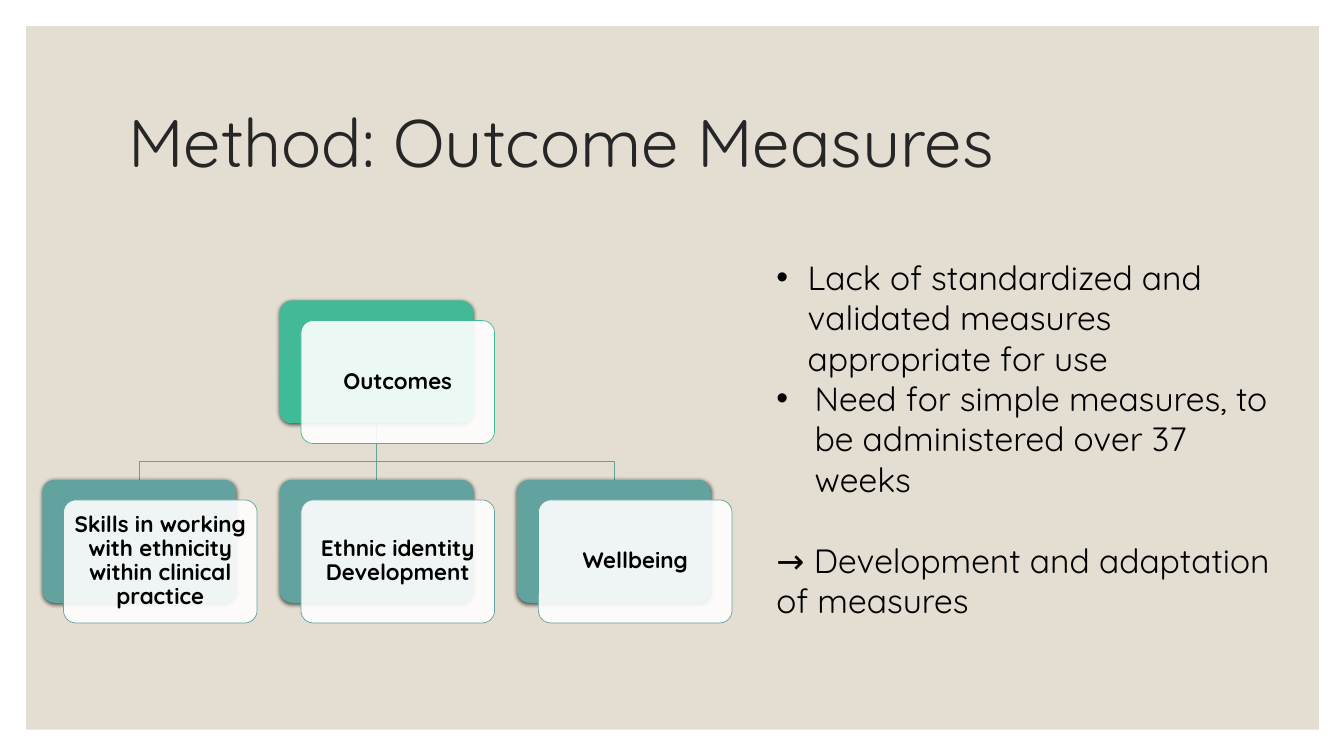
from lxml import etree
from pptx import Presentation
from pptx.dml.color import RGBColor
from pptx.enum import shapes, text
from pptx.oxml import parse_xml
from pptx.oxml.ns import nsdecls, qn
from pptx.util import Inches, Pt

FONT = "Quicksand"
TEAL = "62A39F"
GREEN = "42BA97"
OUTCOMES = [
    "Skills in working with ethnicity within clinical practice",
    "Ethnic identity Development",
    "Wellbeing",
]
# Text, hanging indent in inches, space before in points
POINTS = [
    ("Lack of standardized and validated measures appropriate for use", 0.31, 0),
    ("Need for simple measures, to be administered over 37 weeks", 0.38, 0),
    ("→ Development and adaptation of measures", 0, 29),
]
NODE_WIDTH, NODE_HEIGHT = 1.92, 1.22
CARD_OFFSET = 0.21, 0.2


def color(hex_string):
    return RGBColor.from_string(hex_string)


def set_format(target, values):
    for name, value in values.items():
        setattr(target, name, value)


def style_font(paragraph, size, hex_string, bold=False):
    set_format(paragraph.font, {"name": FONT, "size": Pt(size), "bold": bold})
    paragraph.font.color.rgb = color(hex_string)


def place(shape, left, top, width, height):
    set_format(shape, {"left": Inches(left), "top": Inches(top),
                       "width": Inches(width), "height": Inches(height)})


def add_backdrop(slide, left, top, width, height):
    backdrop = slide.shapes.add_shape(
        shapes.MSO_SHAPE.RECTANGLE, *map(Inches, (left, top, width, height)))
    backdrop.shadow.inherit = False
    backdrop.fill.solid()
    backdrop.fill.fore_color.rgb = color("E3DED1")
    backdrop.line.fill.background()
    slide.shapes._spTree.insert(2, backdrop._element)


def add_title(slide, left, top, width, height):
    title = slide.shapes.title
    place(title, left, top, width, height)
    title.text = "Method: Outcome Measures"
    set_format(title.text_frame, {"vertical_anchor": text.MSO_ANCHOR.MIDDLE,
                                  "auto_size": text.MSO_AUTO_SIZE.NONE})
    paragraph = title.text_frame.paragraphs[0]
    set_format(paragraph, {"alignment": text.PP_ALIGN.LEFT, "line_spacing": 0.9})
    style_font(paragraph, 48, "262626")


def add_points(slide, left, top, width, height):
    body = slide.placeholders[1]
    place(body, left, top, width, height)
    frame = body.text_frame
    set_format(frame, {"vertical_anchor": text.MSO_ANCHOR.TOP,
                       "auto_size": text.MSO_AUTO_SIZE.NONE})
    frame.text = "\n".join(point for point, _, _ in POINTS)
    for paragraph, (_, indent, gap) in zip(frame.paragraphs, POINTS):
        set_format(paragraph, {"space_before": Pt(gap), "space_after": Pt(0)})
        style_font(paragraph, 24, "000000")
        properties = paragraph._p.get_or_add_pPr()
        properties.set("marL", str(Inches(indent)))
        properties.set("indent", str(-Inches(indent)))
        bullet = (f'<a:buChar {nsdecls("a")} char="•"/>' if indent
                  else f'<a:buNone {nsdecls("a")}/>')
        properties.find(qn("a:defRPr")).addprevious(parse_xml(bullet))


def add_rounded(slide, left, top):
    shape = slide.shapes.add_shape(
        shapes.MSO_SHAPE.ROUNDED_RECTANGLE,
        *map(Inches, (left, top, NODE_WIDTH, NODE_HEIGHT)))
    shape.adjustments[0] = 0.1
    shape.shadow.inherit = False
    return shape


def add_node(slide, left, top, label, start, end):
    """Add a shaded plate with a translucent, labelled card in front."""
    plate = add_rounded(slide, left, top)
    plate.fill.gradient()
    plate.fill.gradient_angle = 270
    for stop, hex_string in zip(plate.fill.gradient_stops, (start, end)):
        stop.color.rgb = color(hex_string)
    plate.line.fill.background()
    plate._element.spPr.find(qn("a:effectLst")).append(parse_xml(
        f'<a:outerShdw {nsdecls("a")} blurRad="{Pt(3)}" dist="{Pt(1)}" dir="5400000" '
        'rotWithShape="0"><a:srgbClr val="000000"><a:alpha val="63000"/>'
        '</a:srgbClr></a:outerShdw>'))

    card = add_rounded(slide, left + CARD_OFFSET[0], top + CARD_OFFSET[1])
    card.fill.solid()
    card.fill.fore_color.rgb = color("FFFFFF")
    white = card._element.spPr.find(qn("a:solidFill"))[0]
    etree.SubElement(white, qn("a:alpha"), val="90000")
    card.line.color.rgb = color(start)
    card.line.width = Pt(0.5)
    frame = card.text_frame
    frame.text = label
    sides = ("left", "top", "right", "bottom")
    set_format(frame, {f"margin_{side}": Inches(0.07) for side in sides})
    set_format(frame, {"word_wrap": True, "vertical_anchor": text.MSO_ANCHOR.MIDDLE})
    paragraph = frame.paragraphs[0]
    set_format(paragraph, {"alignment": text.PP_ALIGN.CENTER, "line_spacing": 0.9})
    style_font(paragraph, 16, "000000", bold=True)


def add_branch(slide, start_x, start_y, end_x, end_y):
    """Link parent to child, straight down or with a bend near the child."""
    if start_x == end_x:
        branch = slide.shapes.add_connector(
            shapes.MSO_CONNECTOR.STRAIGHT,
            *map(Inches, (start_x, start_y, end_x, end_y)))
        etree.SubElement(branch._element.spPr, qn("a:effectLst"))
    else:
        bend_y = end_y - 0.18
        builder = slide.shapes.build_freeform(
            Inches(start_x), Inches(start_y), scale=1.0)
        corners = [(start_x, bend_y), (end_x, bend_y), (end_x, end_y)]
        builder.add_line_segments(
            [(Inches(x), Inches(y)) for x, y in corners], close=False)
        branch = builder.convert_to_shape()
        branch.fill.background()
        branch.shadow.inherit = False
    branch.line.color.rgb = color(TEAL)
    branch.line.width = Pt(0.5)


def add_hierarchy(slide, left, top, width, height):
    step = (width - CARD_OFFSET[0] - NODE_WIDTH) / (len(OUTCOMES) - 1)
    child_lefts = [left + index * step for index in range(len(OUTCOMES))]
    child_top = top + height - CARD_OFFSET[1] - NODE_HEIGHT
    root_left = child_lefts[1]
    half = NODE_WIDTH / 2
    for child_left in child_lefts:
        add_branch(slide, root_left + half, top + NODE_HEIGHT,
                   child_left + half, child_top)
    add_node(slide, root_left, top, "Outcomes", GREEN, "3EBB97")
    for child_left, label in zip(child_lefts, OUTCOMES):
        add_node(slide, child_left, child_top, label, TEAL, "60A39F")


def main():
    presentation = Presentation()
    set_format(presentation, {"slide_width": Inches(13.33),
                              "slide_height": Inches(7.5)})
    slide = presentation.slides.add_slide(presentation.slide_layouts[1])
    add_backdrop(slide, 0.26, 0.26, 12.82, 6.98)
    add_title(slide, 1.17, 0.7, 11, 1.5)
    add_hierarchy(slide, 0.42, 2.98, 6.84, 3.2)
    add_points(slide, 7.6, 2.5, 5.22, 3.74)
    presentation.save("out.pptx")


if __name__ == "__main__":
    main()
